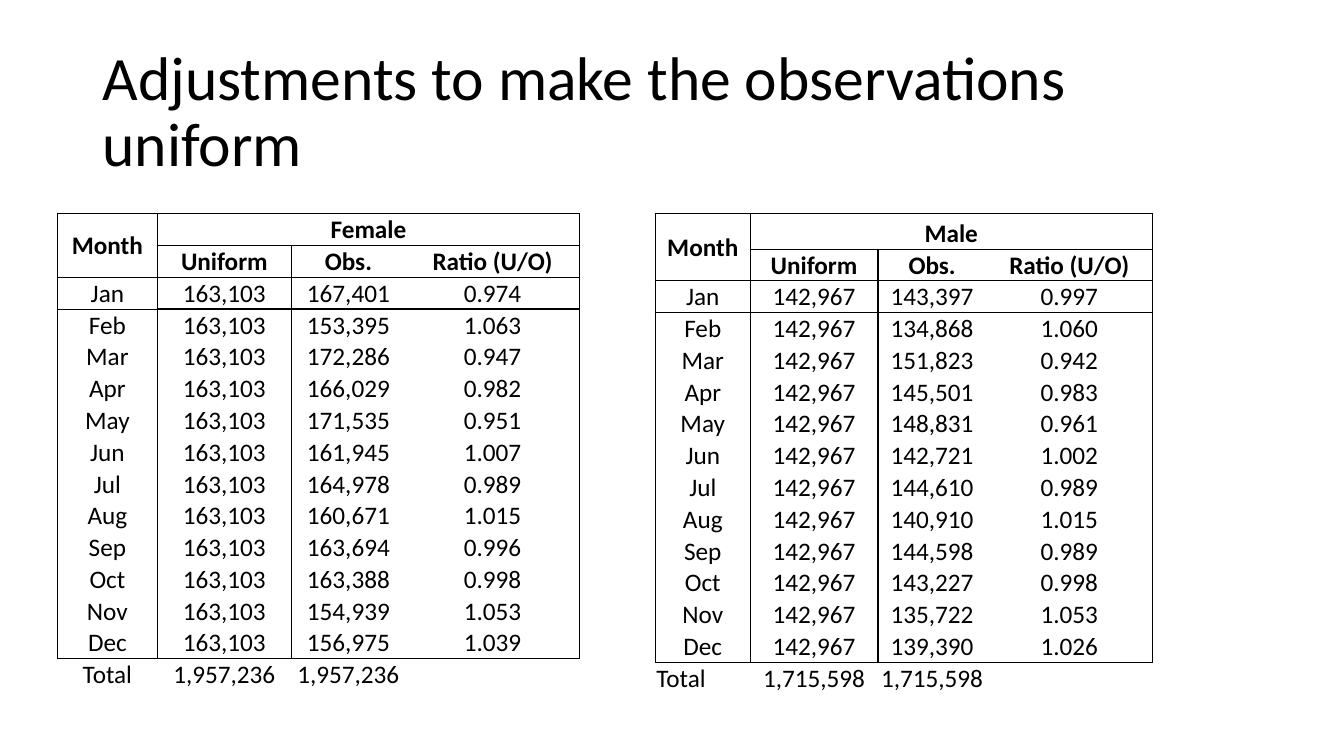
from dataclasses import dataclass

from lxml import etree
from pptx import Presentation
from pptx import util as u
from pptx.dml.color import RGBColor
from pptx.enum import text
from pptx.oxml.ns import qn

FONT = "Calibri"
BLACK = "000000"
NO_STYLE = "{2D5ABB26-0587-4C30-8999-92F81FD0307C}"
MONTHS = "Jan Feb Mar Apr May Jun Jul Aug Sep Oct Nov Dec".split()
COLUMN_SHARES = (0.191, 0.257, 0.218, 0.334)
FIRST_MONTH, LAST_MONTH, TOTAL = 2, 13, 14
TABLE_TOP, TABLE_HEIGHT = 28.27, 63.07

prs = Presentation()
prs.slide_width, prs.slide_height = u.Inches(13.33), u.Inches(7.5)


@dataclass(frozen=True)
class BirthTable:
    sex: str
    left: float
    width: float
    heading_height: float
    total_align: text.PP_ALIGN
    total_anchor: text.MSO_ANCHOR
    uniform: int
    observed: tuple[int, ...]

    def rows(self) -> list[list[str]]:
        total = f"{sum(self.observed):,}"
        months = [
            [month, f"{self.uniform:,}", f"{obs:,}", f"{self.uniform / obs:.3f}"]
            for month, obs in zip(MONTHS, self.observed)
        ]
        return [
            ["Month", self.sex, "", ""],
            ["", "Uniform", "Obs.", "Ratio (U/O)"],
            *months,
            ["Total", total, total, ""],
        ]


TABLES = (
    BirthTable(
        "Female", 4.28, 38.86, 4.2, text.PP_ALIGN.CENTER, text.MSO_ANCHOR.MIDDLE, 163103,
        (167401, 153395, 172286, 166029, 171535, 161945,
         164978, 160671, 163694, 163388, 154939, 156975),
    ),
    BirthTable(
        "Male", 48.76, 36.98, 4.67, text.PP_ALIGN.LEFT, text.MSO_ANCHOR.BOTTOM, 142967,
        (143397, 134868, 151823, 145501, 148831, 142721,
         144610, 140910, 144598, 143227, 135722, 139390),
    ),
)


def across(percent: float) -> int:
    return round(prs.slide_width * percent / 100)


def down(percent: float) -> int:
    return round(prs.slide_height * percent / 100)


def color(value: str) -> RGBColor:
    return RGBColor.from_string(value)


def format_text(p, size: float, bold: bool, align: text.PP_ALIGN) -> None:
    p.alignment = align
    for r in p.runs:
        r.font.name, r.font.size, r.font.bold = FONT, u.Pt(size), bold
        r.font.color.rgb = color(BLACK)


def cell_edges(row: int, col: int) -> dict[str, float]:
    edges = {}
    if row < TOTAL:
        if col < 2:
            edges["L"] = 1
        if col in (0, 3) or row == 0:
            edges["R"] = 1
    if row == 1 and col > 0:
        edges["T"] = 0.5
    elif row in (0, FIRST_MONTH, TOTAL):
        edges["T"] = 0.5 if (row, col) == (FIRST_MONTH, 0) else 1
    if row == 0 or (row, col) == (1, 0):
        edges["B"] = 0.5
    elif row in (1, LAST_MONTH):
        edges["B"] = 1
    return edges


def draw_edges(cell, edges: dict[str, float]) -> None:
    tc_pr = cell._tc.get_or_add_tcPr()
    for side, width in edges.items():
        line = etree.SubElement(tc_pr, qn(f"a:ln{side}"), w=str(u.Pt(width)))
        fill = etree.SubElement(line, qn("a:solidFill"))
        etree.SubElement(fill, qn("a:srgbClr"), val=BLACK)


def add_birth_table(slide, births: BirthTable) -> None:
    rows = births.rows()
    frame = slide.shapes.add_table(
        len(rows), len(COLUMN_SHARES), across(births.left), down(TABLE_TOP),
        across(births.width), down(TABLE_HEIGHT),
    )
    table = frame.table
    table.first_row = table.horz_banding = False
    for style in frame.element.iter(qn("a:tableStyleId")):
        style.text = NO_STYLE
    for column, share in zip(table.columns, COLUMN_SHARES):
        column.width = across(births.width * share)
    other_height = (TABLE_HEIGHT - births.heading_height) / (len(rows) - 1)
    for i, row in enumerate(table.rows):
        row.height = down(other_height if i else births.heading_height)

    table.cell(0, 0).merge(table.cell(1, 0))
    table.cell(0, 1).merge(table.cell(0, 3))
    for i, values in enumerate(rows):
        for j, value in enumerate(values):
            cell = table.cell(i, j)
            cell.margin_left = cell.margin_right = cell.margin_top = u.Inches(0.01)
            cell.margin_bottom = 0
            align, anchor = text.PP_ALIGN.CENTER, text.MSO_ANCHOR.MIDDLE
            if (i, j) == (0, 1):
                anchor = text.MSO_ANCHOR.BOTTOM
            elif (i, j) == (TOTAL, 0):
                align, anchor = births.total_align, births.total_anchor
            cell.vertical_anchor = anchor
            if value:
                cell.text_frame.text = value
            format_text(cell.text_frame.paragraphs[0], 18, i < FIRST_MONTH, align)
            draw_edges(cell, cell_edges(i, j))
            cell.fill.background()


def add_title(slide, wording: str) -> None:
    sp = slide.shapes.title
    sp.left, sp.top = across(6.88), down(5.33)
    sp.width, sp.height = across(86.25), down(19.33)
    tf = sp.text_frame
    tf.text = wording
    tf.word_wrap = True
    tf.auto_size = text.MSO_AUTO_SIZE.NONE
    tf.vertical_anchor = text.MSO_ANCHOR.MIDDLE
    p = tf.paragraphs[0]
    p.line_spacing = 0.9
    format_text(p, 44, False, text.PP_ALIGN.LEFT)


def main() -> None:
    slide = prs.slides.add_slide(prs.slide_layouts[5])
    add_title(slide, "Adjustments to make the observations uniform")
    for births in TABLES:
        add_birth_table(slide, births)
    prs.save("out.pptx")


if __name__ == "__main__":
    main()
